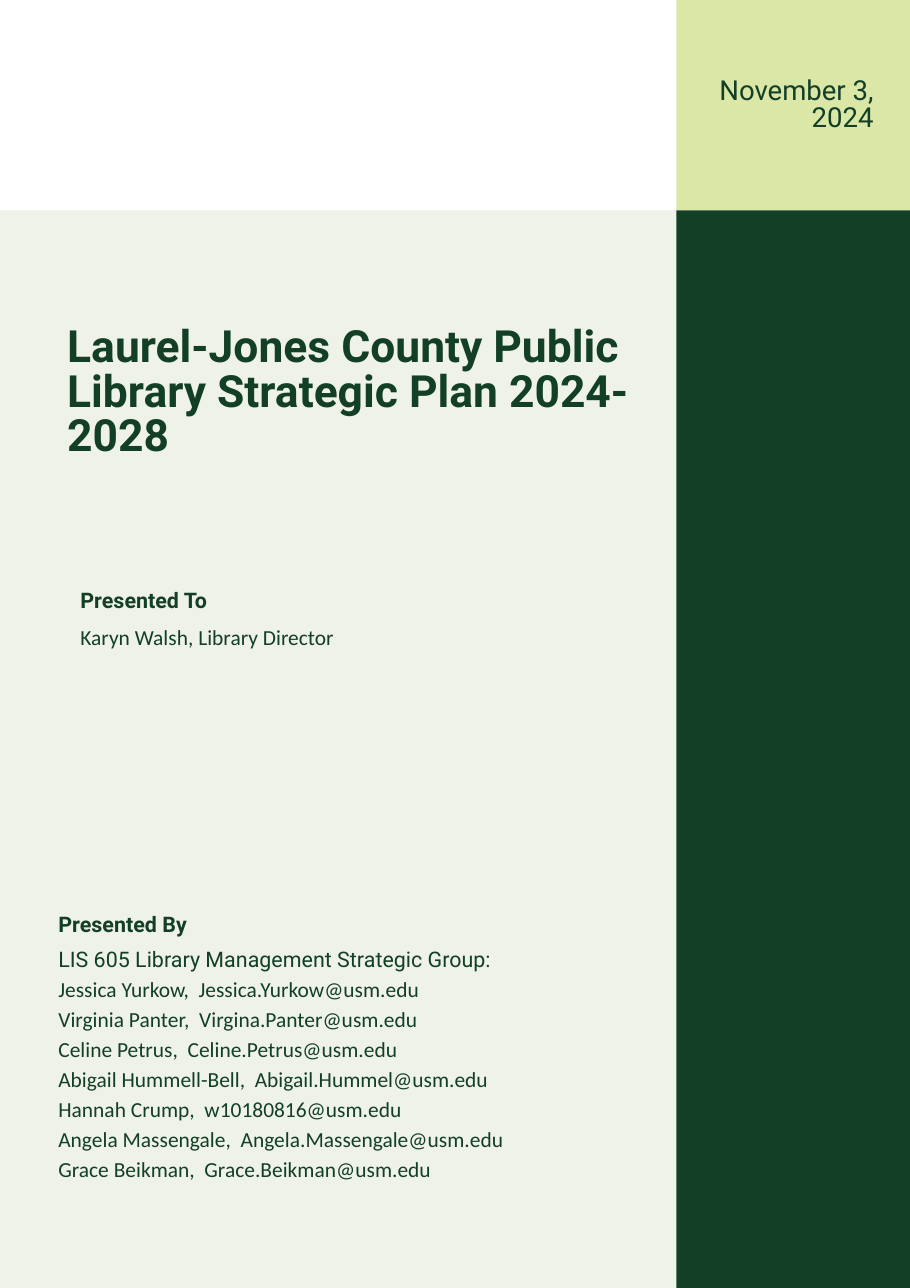
"""Build the cover page of a library strategic plan."""
from dataclasses import dataclass

from pptx import Presentation
from pptx import util as u
from pptx.dml import color
from pptx.enum import shapes, text


@dataclass(frozen=True)
class Theme:
    """Colours, fonts and type sizes of the cover."""
    green: str = "133F26"
    lime: str = "DAE7A7"
    cream: str = "EEF2E9"
    heading_font: str = "Roboto"
    detail_font: str = "Calibri"
    title_size: float = 29
    date_size: float = 18
    body_size: float = 14
    body_leading: float = 19.6


THEME = Theme()
PAGE_WIDTH, PAGE_HEIGHT = 8.26, 11.69
COLUMN_LEFT, BAND_BOTTOM = 6.14, 1.91
BLEED_LEFT, BLEED_TOP = -0.25, -0.26
BLEED_RIGHT, BLEED_BOTTOM = 8.57, 11.96
LABEL_HEIGHT = 0.26

MEMBERS = [
    ("Jessica Yurkow", "Jessica.Yurkow@usm.edu"),
    ("Virginia Panter", "Virgina.Panter@usm.edu"),
    ("Celine Petrus", "Celine.Petrus@usm.edu"),
    ("Abigail Hummell-Bell", "Abigail.Hummel@usm.edu"),
    ("Hannah Crump", "w10180816@usm.edu"),
    ("Angela Massengale", "Angela.Massengale@usm.edu"),
    ("Grace Beikman", "Grace.Beikman@usm.edu"),
]


def inches(box):
    """Convert left, top, width and height to lengths."""
    return [u.Inches(value) for value in box]


def add_panel(slide, left, top, right, bottom, fill):
    """Draw a plain colour panel between the given edges."""
    panel = slide.shapes.add_shape(
        shapes.MSO_SHAPE.RECTANGLE,
        *inches((left, top, right - left, bottom - top)))
    panel.shadow.inherit = False
    panel.fill.solid()
    panel.fill.fore_color.rgb = color.RGBColor.from_string(fill)
    panel.line.fill.background()


def write_lines(holder, lines, size, leading, bold=False,
                align=text.PP_ALIGN.LEFT):
    """Fill a text holder with one paragraph per (wording, font) pair."""
    frame = holder.text_frame
    frame.word_wrap = True
    frame.auto_size = text.MSO_AUTO_SIZE.NONE
    frame.vertical_anchor = text.MSO_ANCHOR.TOP
    frame.margin_left = frame.margin_right = 0
    frame.margin_top = frame.margin_bottom = 0
    for index, (wording, font_name) in enumerate(lines):
        paragraph = frame.add_paragraph() if index else frame.paragraphs[0]
        paragraph.alignment = align
        paragraph.line_spacing = u.Pt(leading)
        paragraph.space_before = paragraph.space_after = u.Pt(0)
        run = paragraph.add_run()
        run.text = wording
        run.font.name = font_name
        run.font.size = u.Pt(size)
        run.font.bold = bold
        run.font.color.rgb = color.RGBColor.from_string(THEME.green)


def add_background(slide):
    """Lay the date band, the main panel and the side column."""
    add_panel(slide, COLUMN_LEFT, BLEED_TOP, BLEED_RIGHT, BAND_BOTTOM,
              THEME.lime)
    add_panel(slide, BLEED_LEFT, BAND_BOTTOM, COLUMN_LEFT, BLEED_BOTTOM,
              THEME.cream)
    add_panel(slide, COLUMN_LEFT, BAND_BOTTOM, BLEED_RIGHT, BLEED_BOTTOM,
              THEME.green)


def add_date(slide, box):
    """Set the date against the right side of its box."""
    date = slide.shapes.add_textbox(*inches(box))
    write_lines(date, [("November 3, 2024", THEME.heading_font)],
                THEME.date_size, THEME.date_size, align=text.PP_ALIGN.RIGHT)


def place_title(slide, box):
    """Move the title placeholder into its box, in front of the panels."""
    title = slide.shapes.title
    title.left, title.top, title.width, title.height = inches(box)
    title._element.getparent().append(title._element)
    plan = "Laurel-Jones County Public Library Strategic Plan 2024-2028"
    write_lines(title, [(plan, THEME.heading_font)],
                THEME.title_size, THEME.title_size, bold=True)


def add_credit(slide, box, label, details, detail_offset):
    """Group a bold label with the detail lines below it."""
    left, top, width, height = box
    credit = slide.shapes.add_group_shape()
    heading = credit.shapes.add_textbox(
        *inches((left, top, width, LABEL_HEIGHT)))
    write_lines(heading, [(label, THEME.heading_font)],
                THEME.body_size, THEME.body_leading, bold=True)
    people = credit.shapes.add_textbox(
        *inches((left, top + detail_offset, width, height - detail_offset)))
    write_lines(people, details, THEME.body_size, THEME.body_leading)


def build_cover(prs):
    """Compose the cover slide."""
    slide = prs.slides.add_slide(prs.slide_layouts[5])
    add_background(slide)
    add_date(slide, (6.36, 0.71, 1.57, 0.53))
    place_title(slide, (0.61, 2.97, 5.35, 1.62))
    add_credit(slide, (0.73, 5.29, 3.11, 0.6), "Presented To",
               [("Karyn Walsh, Library Director", THEME.detail_font)], 0.34)
    team = [("LIS 605 Library Management Strategic Group:",
             THEME.heading_font)]
    team += [(f"{name},  {email}", THEME.detail_font)
             for name, email in MEMBERS]
    add_credit(slide, (0.53, 8.23, 4.84, 2.48), "Presented By", team, 0.32)


def main():
    """Create and save the presentation."""
    prs = Presentation()
    prs.slide_width = u.Inches(PAGE_WIDTH)
    prs.slide_height = u.Inches(PAGE_HEIGHT)
    build_cover(prs)
    prs.save("out.pptx")


if __name__ == "__main__":
    main()
